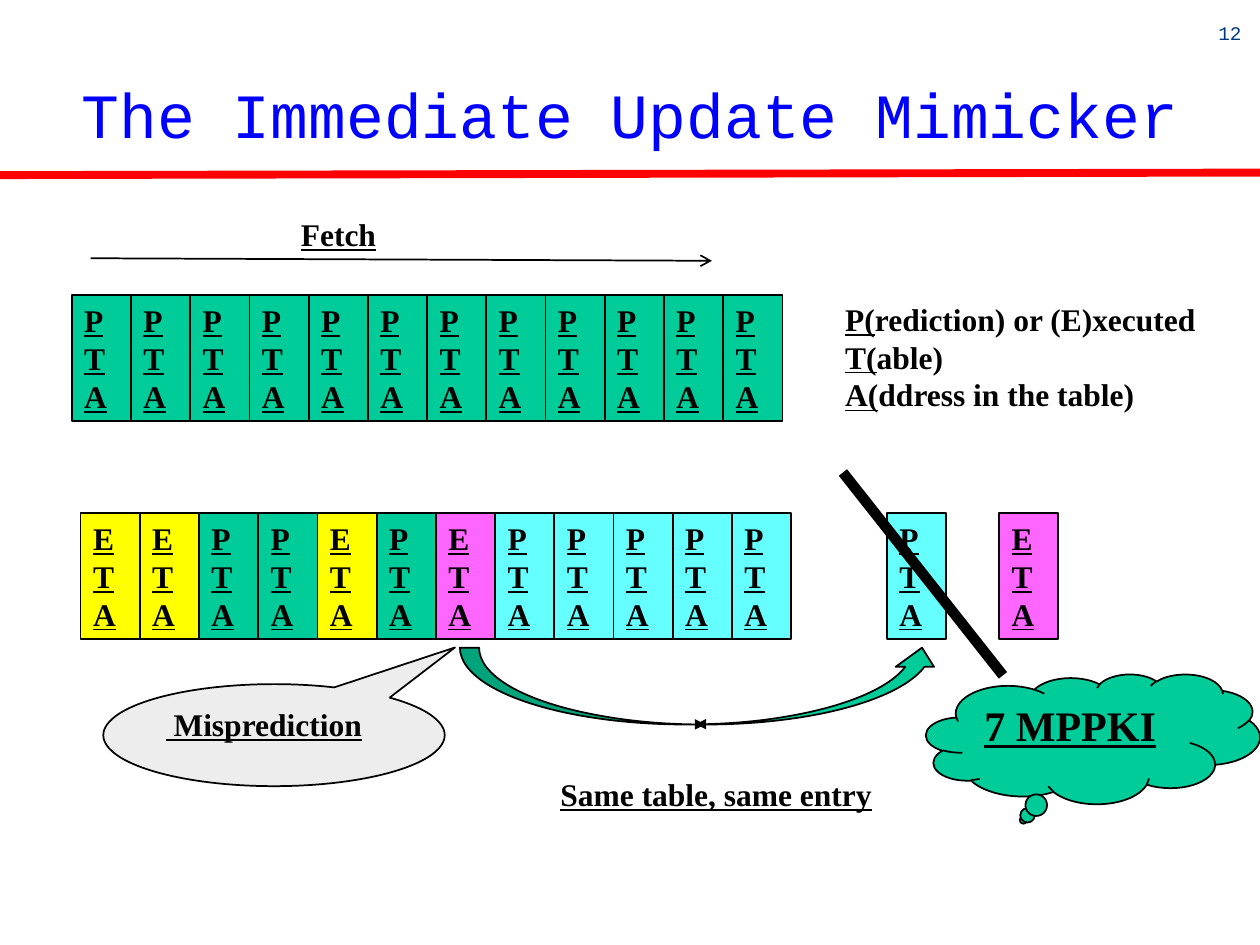
from lxml import etree
from pptx import Presentation
from pptx.dml.color import RGBColor
from pptx.enum.shapes import MSO_CONNECTOR, MSO_SHAPE
from pptx.enum.text import MSO_ANCHOR, PP_ALIGN
from pptx.oxml.ns import qn
from pptx.util import Inches, Pt

RECTANGLE = MSO_SHAPE.RECTANGLE
CURVED_ARROW = MSO_SHAPE.CURVED_UP_ARROW
ELLIPSE_CALLOUT = MSO_SHAPE.OVAL_CALLOUT
CLOUD_CALLOUT = MSO_SHAPE.CLOUD_CALLOUT
STRAIGHT = MSO_CONNECTOR.STRAIGHT
TOP, BOTTOM = MSO_ANCHOR.TOP, MSO_ANCHOR.BOTTOM
LEFT, CENTER = PP_ALIGN.LEFT, PP_ALIGN.CENTER

COLORS = {
    "black": "000000", "red": "FF0000", "title": "0000FF", "number": "003980",
    "green": "00CC99", "yellow": "FFFF00", "pink": "FF66FF",
    "cyan": "66FFFF", "gray": "EDEDED",
}
SERIF, MONO = "Times New Roman", "Courier New"

PREDICTED = ("P", "green")
EXECUTED = ("E", "yellow")
MISPREDICTED = ("E", "pink")
WRONG_PATH = ("P", "cyan")

FETCH_ROW = [PREDICTED] * 12
UPDATE_ROW = [EXECUTED, EXECUTED, PREDICTED, PREDICTED, EXECUTED, PREDICTED,
              MISPREDICTED] + [WRONG_PATH] * 5
LEGEND = [
    [("P(", True), ("rediction) or (E)xecuted", False)],
    [("T(", True), ("able)", False)],
    [("A(", True), ("ddress in the table)", False)],
]

CELL_WIDTH, CELL_HEIGHT = 0.47, 1
FETCH_TOP, UPDATE_TOP = 2.34, 4.07

presentation = Presentation()
presentation.slide_width = Inches(10)
presentation.slide_height = Inches(7.5)
slide = presentation.slides.add_slide(presentation.slide_layouts[6])


def rgb(name):
    return RGBColor.from_string(COLORS[name])


def write(shape, lines, size=18, font=SERIF, color="black", bold=True,
          underline=True, align=LEFT, anchor=TOP, wrap=True, spacing=None,
          margins=(0.1, 0.05)):
    frame = shape.text_frame
    frame.word_wrap = wrap
    frame.vertical_anchor = anchor
    frame.margin_left = frame.margin_right = Inches(margins[0])
    frame.margin_top = frame.margin_bottom = Inches(margins[1])
    for index, line in enumerate(lines):
        paragraph = frame.add_paragraph() if index else frame.paragraphs[0]
        paragraph.alignment = align
        paragraph.line_spacing = spacing
        runs = [(line, underline)] if isinstance(line, str) else line
        for text, underlined in runs:
            run = paragraph.add_run()
            run.text = text
            run.font.name = font
            run.font.size = Pt(size)
            run.font.bold = bold
            run.font.underline = underlined
            run.font.color.rgb = rgb(color)


def add_text(left, top, width, height, lines, **text_format):
    box = slide.shapes.add_textbox(*map(Inches, (left, top, width, height)))
    write(box, lines, **text_format)


def add_box(kind, left, top, width, height, fill, lines=(), **text_format):
    shape = slide.shapes.add_shape(kind, *map(Inches, (left, top, width, height)))
    shape.shadow.inherit = False
    shape.fill.solid()
    shape.fill.fore_color.rgb = rgb(fill)
    shape.line.color.rgb = rgb("black")
    shape.line.width = Pt(1)
    write(shape, lines, **text_format)
    return shape


def add_ends(shape, **ends):
    line = shape.line._get_or_add_ln()
    for name, kind in ends.items():
        etree.SubElement(line, qn(f"a:{name}End")).set("type", kind)


def add_line(start, end, color, width):
    line = slide.shapes.add_connector(STRAIGHT, *map(Inches, start + end))
    line.line.color.rgb = rgb(color)
    line.line.width = Pt(width)
    etree.SubElement(line._element.spPr, qn("a:effectLst"))
    return line


def add_row(left, top, entries):
    for index, (state, fill) in enumerate(entries):
        add_box(RECTANGLE, left + index * CELL_WIDTH, top, CELL_WIDTH,
                CELL_HEIGHT, fill, [state, "T", "A"])


add_text(9.67, 0.17, 0.2, 0.25, ["12"], size=11, font=MONO, color="number",
         bold=False, underline=False, wrap=False, margins=(0, 0))
add_line((0, 1.39), (10, 1.37), "red", 4.5)
add_text(0, 0, 10, 1.25, ["The Immediate Update Mimicker"], size=36, font=MONO,
         color="title", bold=False, underline=False, align=CENTER,
         anchor=BOTTOM, spacing=1.12)

add_row(7.04, UPDATE_TOP, [WRONG_PATH])
same_entry_arrow = add_box(CURVED_ARROW, 3.65, 5.14, 3.82, 0.61, "green")
add_ends(same_entry_arrow, head="triangle", tail="triangle")
add_text(4.35, 6.1, 2.7, 0.4, ["Same table, same entry"], wrap=False)
add_row(7.93, UPDATE_TOP, [MISPREDICTED])
add_line((6.69, 3.75), (7.96, 5.36), "black", 6)

add_row(0.64, UPDATE_TOP, UPDATE_ROW)
misprediction = add_box(ELLIPSE_CALLOUT, 0.82, 5.43, 2.71, 0.81, "gray",
                        [" Misprediction"])
misprediction.adjustments[0] = 0.53
misprediction.adjustments[1] = -0.86

add_text(6.61, 2.33, 3.01, 1.01, LEGEND, wrap=False)
add_row(0.57, FETCH_TOP, FETCH_ROW)
fetch_arrow = add_line((0.72, 2.05), (5.65, 2.07), "black", 1)
add_ends(fetch_arrow, tail="arrow")
add_text(2.29, 1.66, 3, 0.4, ["Fetch"])

add_box(CLOUD_CALLOUT, 7.35, 5.35, 2.65, 1.03, "green", ["7 MPPKI"], size=24)

presentation.save("out.pptx")
